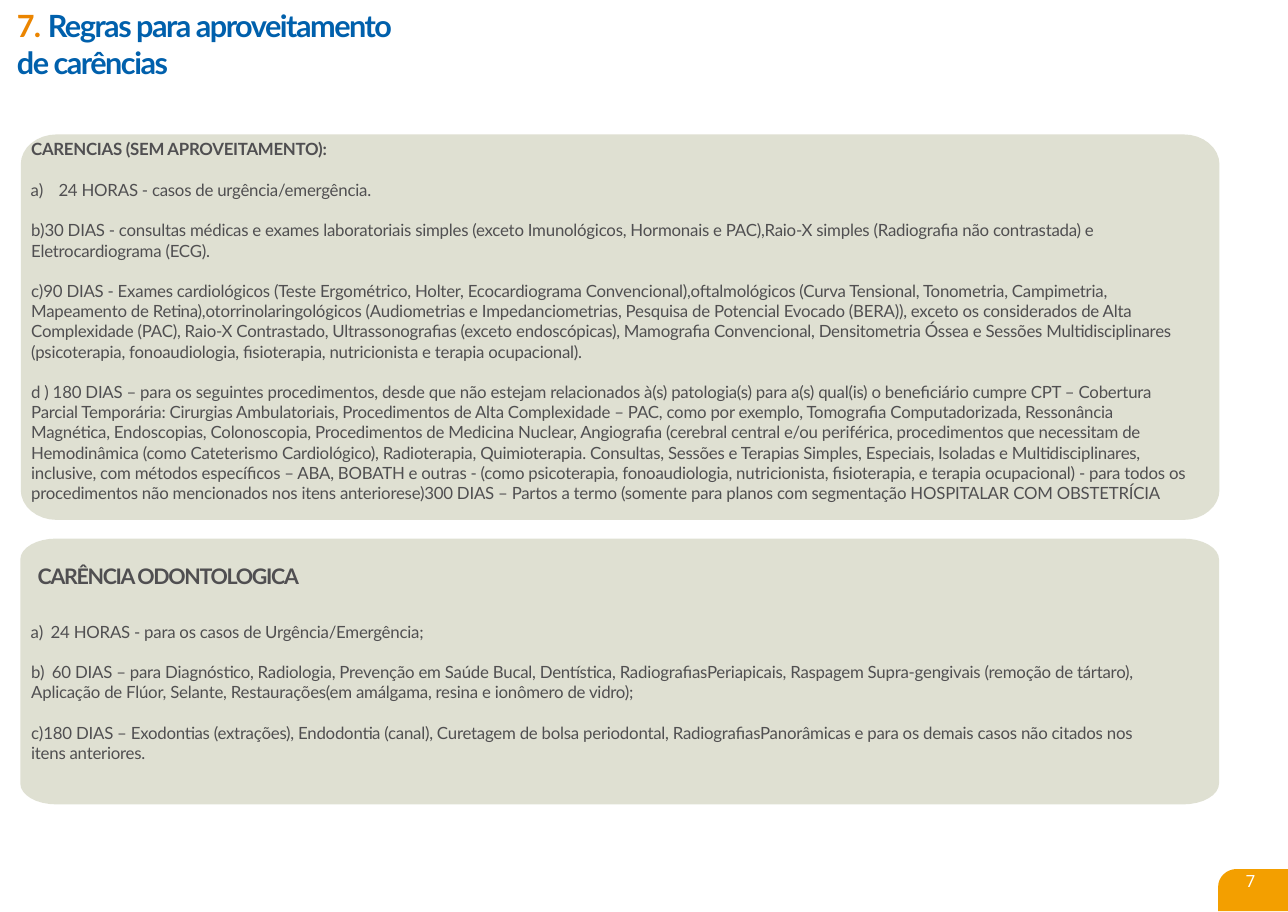
import dataclasses
import math

import lxml.etree
import pptx
import pptx.dml.color
import pptx.oxml.ns
import pptx.util

Cm = pptx.util.Cm
Pt = pptx.util.Pt


@dataclasses.dataclass(frozen=True)
class Theme:
    font: str = "Lato"
    number_font: str = "Roboto"
    title_size: float = 20
    heading_size: float = 14
    body_size: float = 11
    blue: str = "0060AC"
    orange: str = "EB8500"
    tab: str = "F39F00"
    panel: str = "DFE0D2"
    ink: str = "504F51"
    white: str = "FFFFFF"


@dataclasses.dataclass(frozen=True)
class Box:
    left: float
    top: float
    width: float
    height: float

    def inside(self, dx, dy, width, height):
        return Box(self.left + dx, self.top + dy, width, height)


@dataclasses.dataclass(frozen=True)
class Item:
    lines: tuple
    number: int = 0
    margin: float = 0.03
    hanging: float = 0
    before: float = 13.2
    size: float = 11
    bold: bool = False
    spacing: float = -0.18


THEME = Theme()

WAITING_PERIODS = (
    Item(("CARENCIAS (SEM APROVEITAMENTO):",), before=1.1, bold=True, spacing=-0.2),
    Item(("24 HORAS - casos de urgência/emergência.",), 1, 0.66, 0.64),
    Item((
        "30 DIAS - consultas médicas e exames laboratoriais simples (exceto Imunológicos, Hormonais e PAC),Raio-X simples (Radiografia não contrastada) e",
        "Eletrocardiograma (ECG).",
    ), 2),
    Item((
        "90 DIAS - Exames cardiológicos (Teste Ergométrico, Holter, Ecocardiograma Convencional),oftalmológicos (Curva Tensional, Tonometria, Campimetria,",
        "Mapeamento de Retina),otorrinolaringológicos (Audiometrias e Impedanciometrias, Pesquisa de Potencial Evocado (BERA)), exceto os considerados de Alta",
        "Complexidade (PAC), Raio-X Contrastado, Ultrassonografias (exceto endoscópicas), Mamografia Convencional, Densitometria Óssea e Sessões Multidisciplinares",
        "(psicoterapia, fonoaudiologia, fisioterapia, nutricionista e terapia ocupacional).",
    ), 3),
    Item((
        "d ) 180 DIAS – para os seguintes procedimentos, desde que não estejam relacionados à(s) patologia(s) para a(s) qual(is) o beneficiário cumpre CPT – Cobertura",
        "Parcial Temporária: Cirurgias Ambulatoriais, Procedimentos de Alta Complexidade – PAC, como por exemplo, Tomografia Computadorizada, Ressonância",
        "Magnética, Endoscopias, Colonoscopia, Procedimentos de Medicina Nuclear, Angiografia (cerebral central e/ou periférica, procedimentos que necessitam de",
        "Hemodinâmica (como Cateterismo Cardiológico), Radioterapia, Quimioterapia. Consultas, Sessões e Terapias Simples, Especiais, Isoladas e Multidisciplinares,",
        "inclusive, com métodos específicos – ABA, BOBATH e outras - (como psicoterapia, fonoaudiologia, nutricionista, fisioterapia, e terapia ocupacional) - para todos os",
        "procedimentos não mencionados nos itens anteriorese)300 DIAS – Partos a termo (somente para planos com segmentação HOSPITALAR COM OBSTETRÍCIA",
    )),
)

DENTAL_PERIODS = (
    Item(("CARÊNCIA ODONTOLOGICA",), margin=0.18, before=1,
         size=THEME.heading_size, bold=True, spacing=-0.87),
    Item(("24 HORAS - para os casos de Urgência/Emergência;",), 1, 0.48, 0.46, 21.5),
    Item((
        "60 DIAS – para Diagnóstico, Radiologia, Prevenção em Saúde Bucal, Dentística, RadiografiasPeriapicais, Raspagem Supra-gengivais (remoção de tártaro),",
    ), 2, 0.51, 0.48),
    Item(("Aplicação de Flúor, Selante, Restaurações(em amálgama, resina e ionômero de vidro);",), before=0),
    Item((
        "180 DIAS – Exodontias (extrações), Endodontia (canal), Curetagem de bolsa periodontal, RadiografiasPanorâmicas e para os demais casos não citados nos",
        "itens anteriores.",
    ), 3),
)


def color(value):
    return pptx.dml.color.RGBColor.from_string(value)


def add_rounded(page, box, radius_x, radius_y, corners, fill):
    right, bottom = box.left + box.width, box.top + box.height
    centers = (
        (box.left, box.top, 1, 1),
        (right, box.top, -1, 1),
        (right, bottom, -1, -1),
        (box.left, bottom, 1, -1),
    )
    points = []
    for corner, (x, y, sign_x, sign_y) in enumerate(centers):
        if corner not in corners:
            points.append((Cm(x), Cm(y)))
            continue
        for step in range(9):
            angle = math.radians(180 + 90 * corner + 90 * step / 8)
            points.append((
                Cm(x + radius_x * (sign_x + math.cos(angle))),
                Cm(y + radius_y * (sign_y + math.sin(angle))),
            ))
    builder = page.shapes.build_freeform(*points[0])
    builder.add_line_segments(points[1:], close=True)
    shape = builder.convert_to_shape()
    shape.shadow.inherit = False
    shape.fill.solid()
    shape.fill.fore_color.rgb = color(fill)
    shape.line.fill.background()


def add_text_frame(page, box, inset_top=0.03):
    shape = page.shapes.add_textbox(Cm(box.left), Cm(box.top), Cm(box.width), Cm(box.height))
    frame = shape.text_frame
    frame.word_wrap = True
    frame.margin_left = frame.margin_right = frame.margin_bottom = 0
    frame.margin_top = Cm(inset_top)
    return frame


def add_span(para, text, size, tint, bold=False, spacing=0, font=THEME.font):
    span = para.add_run()
    span.text = text
    span.font.name = font
    span.font.size = Pt(size)
    span.font.bold = bold
    span.font.color.rgb = color(tint)
    span.font._element.set("spc", str(round(spacing * 100)))


def set_indent(para, margin, hanging=0, number=0):
    properties = para._p.get_or_add_pPr()
    properties.set("marL", str(Cm(margin)))
    properties.set("indent", str(-Cm(hanging)))
    if number:
        bullet = lxml.etree.SubElement(properties, pptx.oxml.ns.qn("a:buAutoNum"))
        bullet.set("type", "alphaLcParenR")
        bullet.set("startAt", str(number))


def add_title(page, box):
    para = add_text_frame(page, box).paragraphs[0]
    para.space_before = Pt(1)
    set_indent(para, 0.03)
    add_span(para, "7. ", THEME.title_size, THEME.orange, True, -0.5)
    add_span(para, "Regras para aproveitamento", THEME.title_size, THEME.blue, True, -1)
    para.add_line_break()
    add_span(para, "de carências", THEME.title_size, THEME.blue, True, -1)


def add_panel(page, box, radius_y, text_box, items):
    add_rounded(page, box, 0.83, radius_y, range(4), THEME.panel)
    frame = add_text_frame(page, text_box)
    for index, item in enumerate(items):
        para = frame.add_paragraph() if index else frame.paragraphs[0]
        para.space_before = Pt(item.before)
        set_indent(para, item.margin, item.hanging, item.number)
        for row, line in enumerate(item.lines):
            if row:
                para.add_line_break()
            add_span(para, line, item.size, THEME.ink, item.bold, item.spacing)


def add_page_number(page, box):
    add_rounded(page, box, 0.43, 0.41, (0,), THEME.tab)
    para = add_text_frame(page, box.inside(0.61, 0.03, 0.4, 0.5), 0).paragraphs[0]
    set_indent(para, 0.03)
    add_span(para, "7", THEME.body_size, THEME.white, font=THEME.number_font)


def main():
    deck = pptx.Presentation()
    deck.slide_width, deck.slide_height = Cm(29.7), Cm(21.03)
    page = deck.slides.add_slide(deck.slide_layouts[6])
    add_page_number(page, Box(28.09, 20.04, 1.61, 0.97))
    add_title(page, Box(0.36, 0.13, 9.88, 1.78))
    waiting = Box(0.48, 3.1, 27.64, 8.89)
    add_panel(page, waiting, 0.69, waiting.inside(0.21, 0.08, 26.85, 8.46), WAITING_PERIODS)
    dental = Box(0.47, 12.42, 27.64, 6.13)
    add_panel(page, dental, 0.48, dental.inside(0.22, 0.53, 26.09, 4.7), DENTAL_PERIODS)
    deck.save("out.pptx")


if __name__ == "__main__":
    main()
